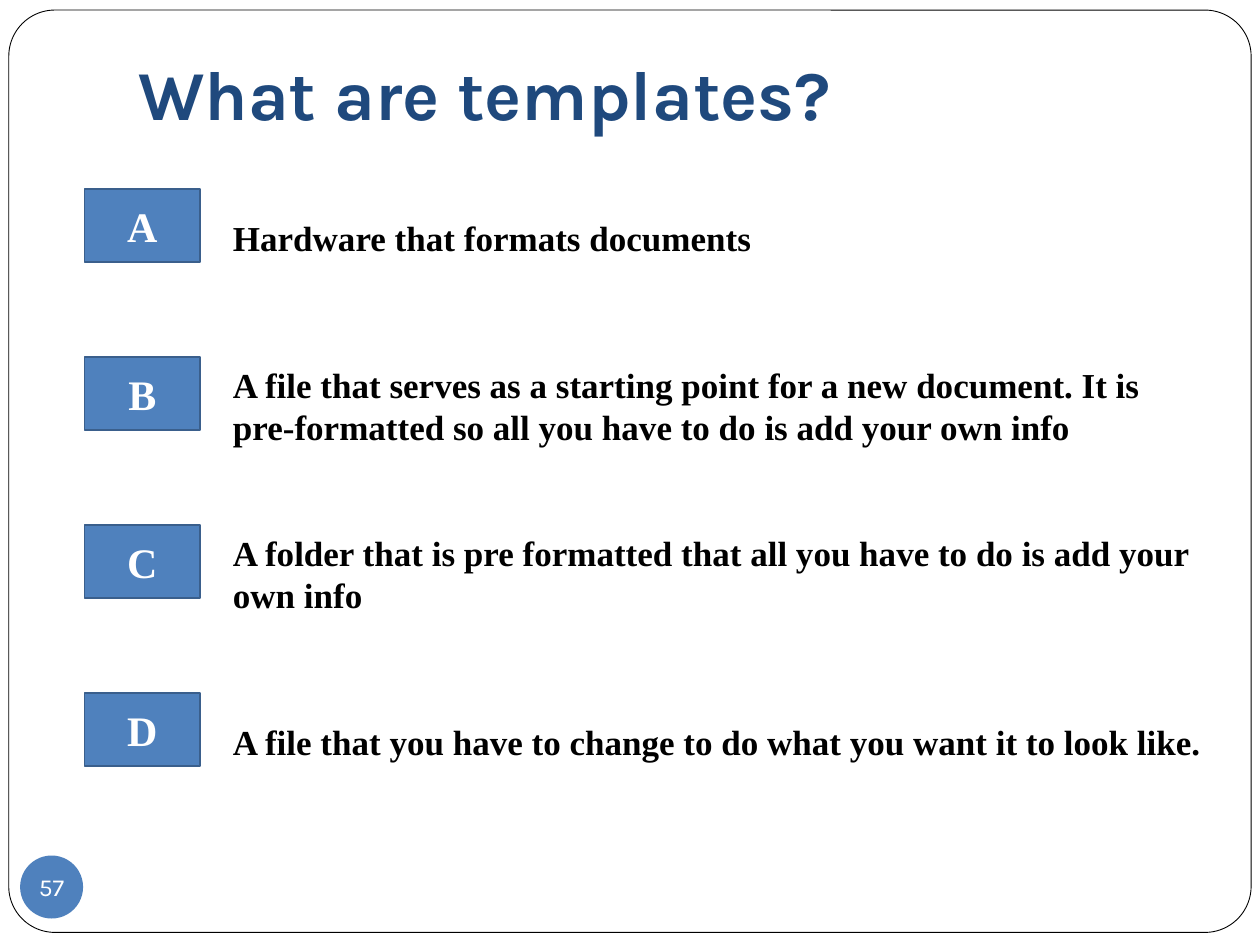
from pptx import Presentation
from pptx.dml.color import RGBColor
from pptx.enum.shapes import MSO_SHAPE
from pptx.enum.text import MSO_ANCHOR, PP_ALIGN
from pptx.util import Inches, Pt

# Content
QUESTION = "What are templates?"
PAGE_NUMBER = "57"
# letter, answer, space before in points, line spacing
ANSWERS = [
    ("A", "Hardware that formats documents", 0, 2.5),
    ("B", "A file that serves as a starting point for a new document. It is "
          "pre-formatted so all you have to do is add your own info", 60, 1),
    ("C", "A folder that is pre formatted that all you have to do is add your "
          "own info", 48, 1),
    ("D", "A file that you have to change to do what you want it to look like.",
     60, 1),
]

# Style
WHITE = RGBColor(0xFF, 0xFF, 0xFF)
BLACK = RGBColor(0x00, 0x00, 0x00)
NAVY = RGBColor(0x1F, 0x49, 0x7D)
BLUE = RGBColor(0x4F, 0x81, 0xBD)
BLUE_EDGE = RGBColor(0x3A, 0x5F, 0x8C)
HEADING_FONT = "Karla"
ANSWER_FONT = "Times New Roman"

# Badge column
BADGE_LEFT, BADGE_TOP = 0.67, 1.5
BADGE_WIDTH, BADGE_HEIGHT = 0.92, 0.58
BADGE_PITCH = 4 / 3


def write(paragraph, text, *, font, size, color, bold=True,
          align=PP_ALIGN.LEFT, before=0, spacing=1):
    paragraph.alignment = align
    paragraph.space_before = Pt(before)
    paragraph.line_spacing = spacing
    run = paragraph.add_run()
    run.text = text
    run.font.name = font
    run.font.size = Pt(size)
    run.font.bold = bold
    run.font.color.rgb = color


def add_panel(slide, preset, box, fill, edge=None, edge_width=1):
    panel = slide.shapes.add_shape(preset, *map(Inches, box))
    panel.shadow.inherit = False
    panel.fill.solid()
    panel.fill.fore_color.rgb = fill
    if edge is None:
        panel.line.fill.background()
    else:
        panel.line.color.rgb = edge
        panel.line.width = Pt(edge_width)
    panel.text_frame.vertical_anchor = MSO_ANCHOR.MIDDLE
    return panel


def add_text_area(slide, box, anchor=MSO_ANCHOR.TOP):
    frame = slide.shapes.add_textbox(*map(Inches, box)).text_frame
    frame.word_wrap = True
    frame.vertical_anchor = anchor
    return frame


def main():
    deck = Presentation()
    deck.slide_width, deck.slide_height = Inches(10), Inches(7.5)
    slide = deck.slides.add_slide(deck.slide_layouts[6])

    # Rounded page border
    border = add_panel(slide, MSO_SHAPE.ROUNDED_RECTANGLE,
                       (0.07, 0.08, 9.86, 7.32), WHITE, BLACK, 0.5)
    border.adjustments[0] = 0.05

    # Question
    question = add_text_area(slide, (1, -0.08, 8.5, 1.25), MSO_ANCHOR.BOTTOM)
    question.margin_bottom = Inches(0.1)
    write(question.paragraphs[0], QUESTION,
          font=HEADING_FONT, size=40, color=NAVY)

    # Page number
    page = add_panel(slide, MSO_SHAPE.OVAL, (0.16, 6.79, 0.5, 0.5),
                     BLUE).text_frame
    page.margin_left = page.margin_right = 0
    page.margin_top = page.margin_bottom = 0
    page.word_wrap = False
    write(page.paragraphs[0], PAGE_NUMBER, font=HEADING_FONT, size=14,
          color=WHITE, bold=False, align=PP_ALIGN.CENTER)

    # Answers, each beside its letter badge
    answers = add_text_area(slide, (1.75, 1.17, 7.92, 5.82))
    for row, (letter, answer, before, spacing) in enumerate(ANSWERS):
        paragraph = answers.add_paragraph() if row else answers.paragraphs[0]
        write(paragraph, answer, font=ANSWER_FONT, size=20, color=BLACK,
              before=before, spacing=spacing)
        badge = add_panel(slide, MSO_SHAPE.RECTANGLE,
                          (BADGE_LEFT, BADGE_TOP + row * BADGE_PITCH,
                           BADGE_WIDTH, BADGE_HEIGHT), BLUE, BLUE_EDGE)
        write(badge.text_frame.paragraphs[0], letter, font=ANSWER_FONT,
              size=24, color=WHITE, align=PP_ALIGN.CENTER)

    deck.save("out.pptx")


if __name__ == "__main__":
    main()
